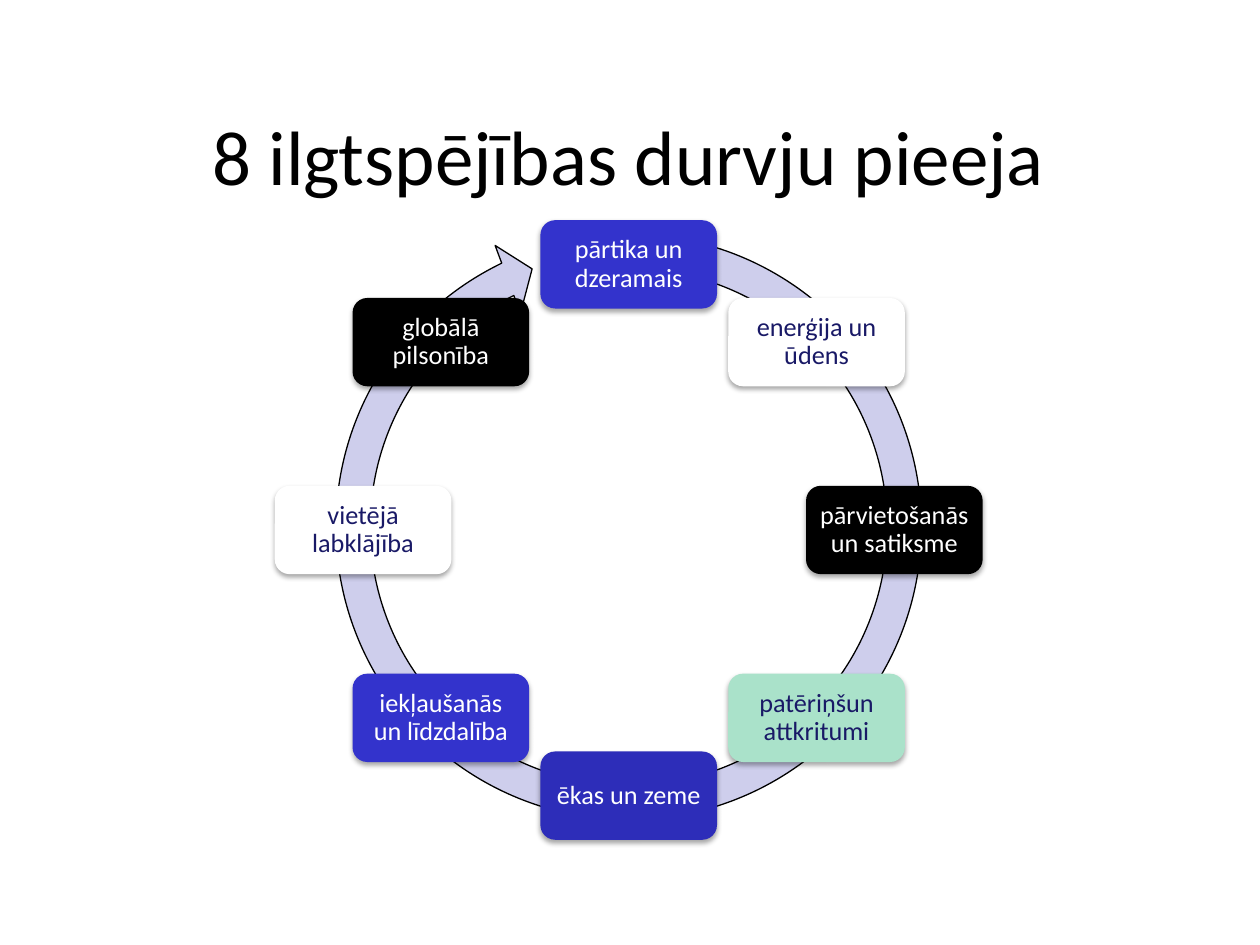
from math import cos, radians, sin

from lxml.etree import SubElement
from pptx import Presentation
from pptx.dml.color import RGBColor
from pptx.enum.shapes import MSO_SHAPE as Shape
from pptx.enum.text import MSO_ANCHOR as Anchor, PP_ALIGN as Align
from pptx.oxml.ns import qn
from pptx.util import Cm, Pt

BLACK = RGBColor(0x00, 0x00, 0x00)
WHITE = RGBColor(0xFF, 0xFF, 0xFF)
NAVY = RGBColor(0x19, 0x19, 0x66)
BLUE = RGBColor(0x33, 0x33, 0xCC)
DEEP = RGBColor(0x2D, 0x2D, 0xB9)
MINT = RGBColor(0xAA, 0xE2, 0xCA)
LILAC = RGBColor(0xCE, 0xCE, 0xEC)
FONT = "Calibri"
CARD_W, CARD_H = 3.56, 1.78
DOORS = [
    ("pārtika un dzeramais", BLUE, WHITE),
    ("enerģija un ūdens", WHITE, NAVY),
    ("pārvietošanās un satiksme", BLACK, WHITE),
    ("patēriņšun attkritumi", MINT, NAVY),
    ("ēkas un zeme", DEEP, WHITE),
    ("iekļaušanās un līdzdalība", BLUE, WHITE),
    ("vietējā labklājība", WHITE, NAVY),
    ("globālā pilsonība", BLACK, WHITE),
]


def write(shape, text, size, color):
    """Put centred text in a shape."""
    frame = shape.text_frame
    frame.word_wrap = True
    frame.vertical_anchor = Anchor.MIDDLE
    frame.text = text
    para = frame.paragraphs[0]
    para.alignment = Align.CENTER
    font = para.runs[0].font
    font.name, font.size, font.color.rgb = FONT, Pt(size), color
    return frame


def add_shade(shape):
    """Give a shape a soft shadow straight below it."""
    shape.shadow.inherit = False
    effects = shape._element.spPr.find(qn("a:effectLst"))
    shade = SubElement(effects, qn("a:outerShdw"), blurRad=str(Pt(3.1)),
                       dist=str(Pt(1.8)), dir="5400000", rotWithShape="0")
    tint = SubElement(shade, qn("a:srgbClr"), val=str(BLACK))
    SubElement(tint, qn("a:alpha"), val="35000")


def add_title(slide, left, top, width, height):
    """Place the slide title in its box."""
    box = slide.shapes.add_textbox(Cm(left), Cm(top), Cm(width), Cm(height))
    write(box, "8 ilgtspējības durvju pieeja", 44, BLACK)


def add_card(slide, mid_x, mid_y, text, fill, color):
    """Place one door card around its centre."""
    card = slide.shapes.add_shape(
        Shape.ROUNDED_RECTANGLE, Cm(mid_x - CARD_W / 2),
        Cm(mid_y - CARD_H / 2), Cm(CARD_W), Cm(CARD_H))
    card.fill.solid()
    card.fill.fore_color.rgb = fill
    card.line.fill.background()
    add_shade(card)
    frame = write(card, text, 15, color)
    frame.paragraphs[0].line_spacing = 0.9
    frame.margin_left = frame.margin_right = Cm(0.15)
    frame.margin_top = frame.margin_bottom = Cm(0.15)


def add_cycle(slide, left, top, size):
    """Place the ring arrow in a square and the doors evenly around it."""
    ring = slide.shapes.add_shape(
        Shape.CIRCULAR_ARROW, Cm(left), Cm(top), Cm(size), Cm(size))
    for i, value in enumerate((0.055, 3.307, 146.389, 168.801, 0.058)):
        ring.adjustments[i] = value
    ring.shadow.inherit = False
    ring.fill.solid()
    ring.fill.fore_color.rgb = LILAC
    ring.line.color.rgb = BLACK
    ring.line.width = Pt(0.75)
    mid_x, mid_y = left + size / 2, top + size / 2 + 0.06
    radius = size / 2 - CARD_H / 2 - 0.04
    for i, door in enumerate(DOORS):
        angle = radians(360 / len(DOORS) * i - 90)
        add_card(slide, mid_x + radius * cos(angle),
                 mid_y + radius * sin(angle), *door)


def main():
    """Build and save the slide."""
    deck = Presentation()
    deck.slide_width, deck.slide_height = Cm(25.4), Cm(19.05)
    slide = deck.slides.add_slide(deck.slide_layouts[6])
    add_title(slide, 1.27, 1.93, 22.81, 2.39)
    add_cycle(slide, 6.39, 4.34, 12.57)
    deck.save("out.pptx")


if __name__ == "__main__":
    main()
